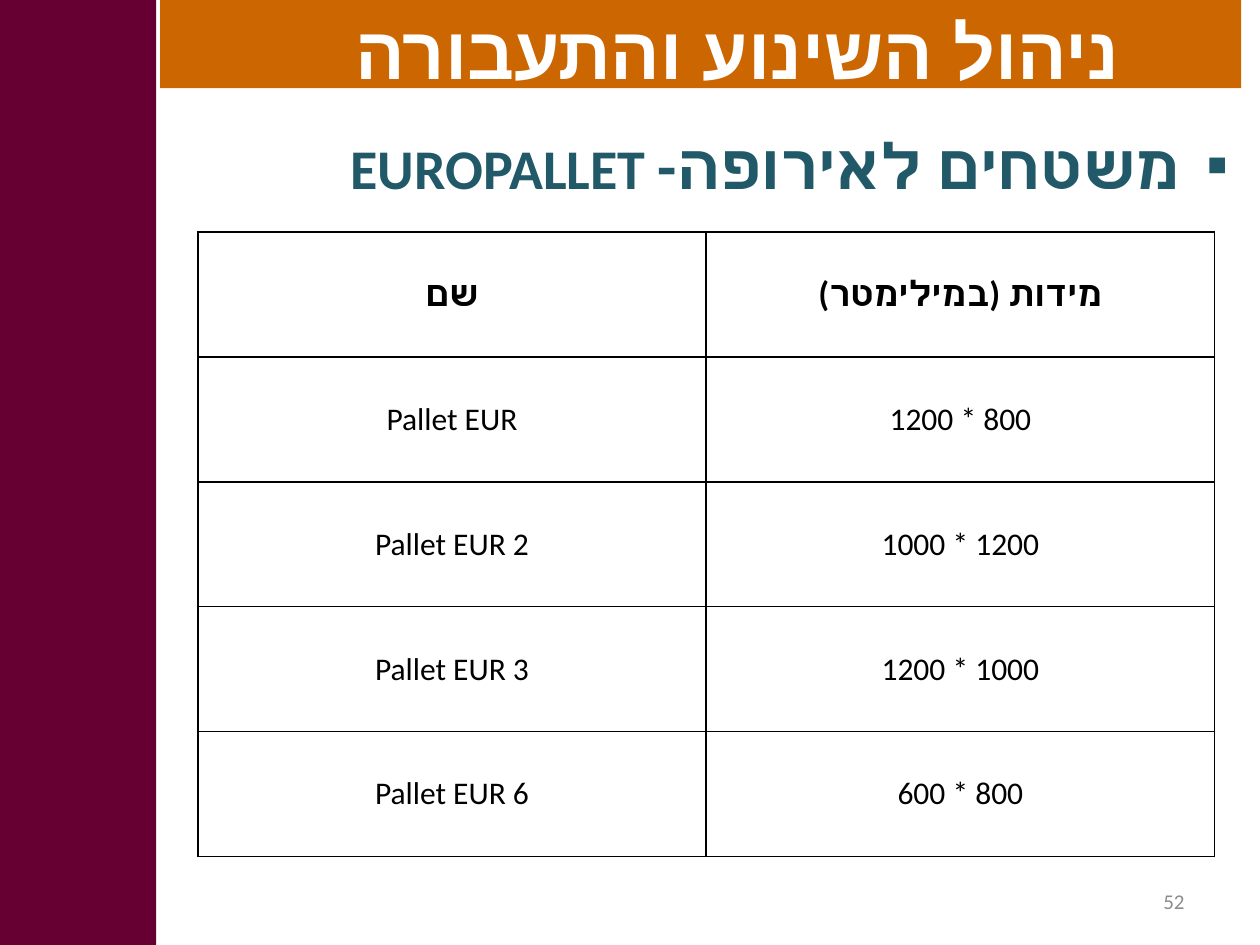
"""Builds the European pallet sizes slide."""
import pptx
import pptx.dml.color
import pptx.enum.shapes
import pptx.enum.text
import pptx.oxml
import pptx.oxml.ns
import pptx.util
from lxml import etree

TITLE = "ניהול השינוע והתעבורה"
PAGE = "52"
HEADING = [
    ("משטחים לאירופה-", 36, "215968", True),
    (" ", 30, "000000", False),
    ("EUROPALLET", 32, "215968", True),
]
PALLETS = [
    ("שם", "מידות (במילימטר)"),
    ("Pallet EUR", "800 * 1200"),
    ("Pallet EUR 2", "1200 * 1000"),
    ("Pallet EUR 3", "1000 * 1200"),
    ("Pallet EUR 6", "800 * 600"),
]
WIDTH, HEIGHT = 10, 7.5
SIDE_BAR = (0, 0, 1.24, HEIGHT)
TOP_BAR = (1.27, 0, 8.58, 0.7)
TITLE_BOX = (1.71, 0, 8.29, 0.79)
HEADING_BOX = (1.71, 0.95, 8.14, 0.7)
TABLE_BOX = (1.57, 1.84, 8.07, 4.96)
PAGE_BOX = (7.17, 6.95, 2.33, 0.4)
ALIGN = pptx.enum.text.PP_ALIGN
MIDDLE = pptx.enum.text.MSO_ANCHOR.MIDDLE


def color(value):
    return pptx.dml.color.RGBColor.from_string(value)


def inches(box):
    return [pptx.util.Inches(v) for v in box]


def place(shape, box):
    shape.left, shape.top, shape.width, shape.height = inches(box)


def add_run(p, text, size, fill, bold=False, face="Calibri"):
    r = p.add_run()
    r.text = text
    r.font.size = pptx.util.Pt(size)
    r.font.bold = bold
    r.font.name = face
    r.font.color.rgb = color(fill)
    cs = etree.SubElement(r.font._element, pptx.oxml.ns.qn("a:cs"))
    cs.set("typeface", face)


def add_bar(s, box, fill):
    bar = s.shapes.add_shape(pptx.enum.shapes.MSO_SHAPE.RECTANGLE, *inches(box))
    bar.shadow.inherit = False
    bar.fill.solid()
    bar.fill.fore_color.rgb = color(fill)
    bar.line.fill.background()
    s.shapes.element.insert(2, bar.element)


def add_title(s):
    title = s.shapes.title
    place(title, TITLE_BOX)
    tf = title.text_frame
    tf.auto_size = pptx.enum.text.MSO_AUTO_SIZE.NONE
    tf.vertical_anchor = MIDDLE
    p = tf.paragraphs[0]
    p.alignment = ALIGN.CENTER
    add_run(p, TITLE, 42, "FFFFFF", True, "Arial")


def add_heading(s):
    body = s.placeholders[1]
    place(body, HEADING_BOX)
    tf = body.text_frame
    tf.auto_size = pptx.enum.text.MSO_AUTO_SIZE.NONE
    p = tf.paragraphs[0]
    p.alignment = ALIGN.RIGHT
    p.space_before = pptx.util.Pt(0)
    pPr = p._p.get_or_add_pPr()
    indent = pptx.util.Inches(0.38)
    for key, value in (("marL", indent), ("indent", -indent), ("rtl", 1)):
        pPr.set(key, str(value))
    etree.SubElement(pPr, pptx.oxml.ns.qn("a:buFont")).set("typeface", "Arial")
    etree.SubElement(pPr, pptx.oxml.ns.qn("a:buChar")).set("char", "▪")
    for run in HEADING:
        add_run(p, *run)


def add_borders(cell):
    tcPr = cell._tc.get_or_add_tcPr()
    for side in "LRTB":
        tcPr.append(pptx.oxml.parse_xml(
            f'<a:ln{side} {pptx.oxml.ns.nsdecls("a")} w="{pptx.util.Pt(1)}">'
            f'<a:solidFill><a:srgbClr val="000000"/></a:solidFill></a:ln{side}>'))


def add_pallets(s):
    rows, cols = len(PALLETS), len(PALLETS[0])
    table = s.shapes.add_table(rows, cols, *inches(TABLE_BOX)).table
    table.first_row = table.horz_banding = False
    for i, texts in enumerate(PALLETS):
        for j, text in enumerate(texts):
            cell = table.cell(i, j)
            add_borders(cell)
            cell.fill.background()
            cell.vertical_anchor = MIDDLE
            p = cell.text_frame.paragraphs[0]
            p.alignment = ALIGN.CENTER
            p._p.get_or_add_pPr().set("rtl", "1")
            add_run(p, text, 18 if i else 20, "000000", i == 0)


def add_page(s):
    tf = s.shapes.add_textbox(*inches(PAGE_BOX)).text_frame
    tf.word_wrap = True
    tf.vertical_anchor = MIDDLE
    p = tf.paragraphs[0]
    p.alignment = ALIGN.RIGHT
    add_run(p, PAGE, 12, "8C8C8C")


def main():
    prs = pptx.Presentation()
    prs.slide_width, prs.slide_height = inches((WIDTH, HEIGHT))
    s = prs.slides.add_slide(prs.slide_layouts[1])
    add_bar(s, SIDE_BAR, "660033")
    add_bar(s, TOP_BAR, "CC6600")
    add_title(s)
    add_heading(s)
    add_pallets(s)
    add_page(s)
    prs.save("out.pptx")


if __name__ == "__main__":
    main()
